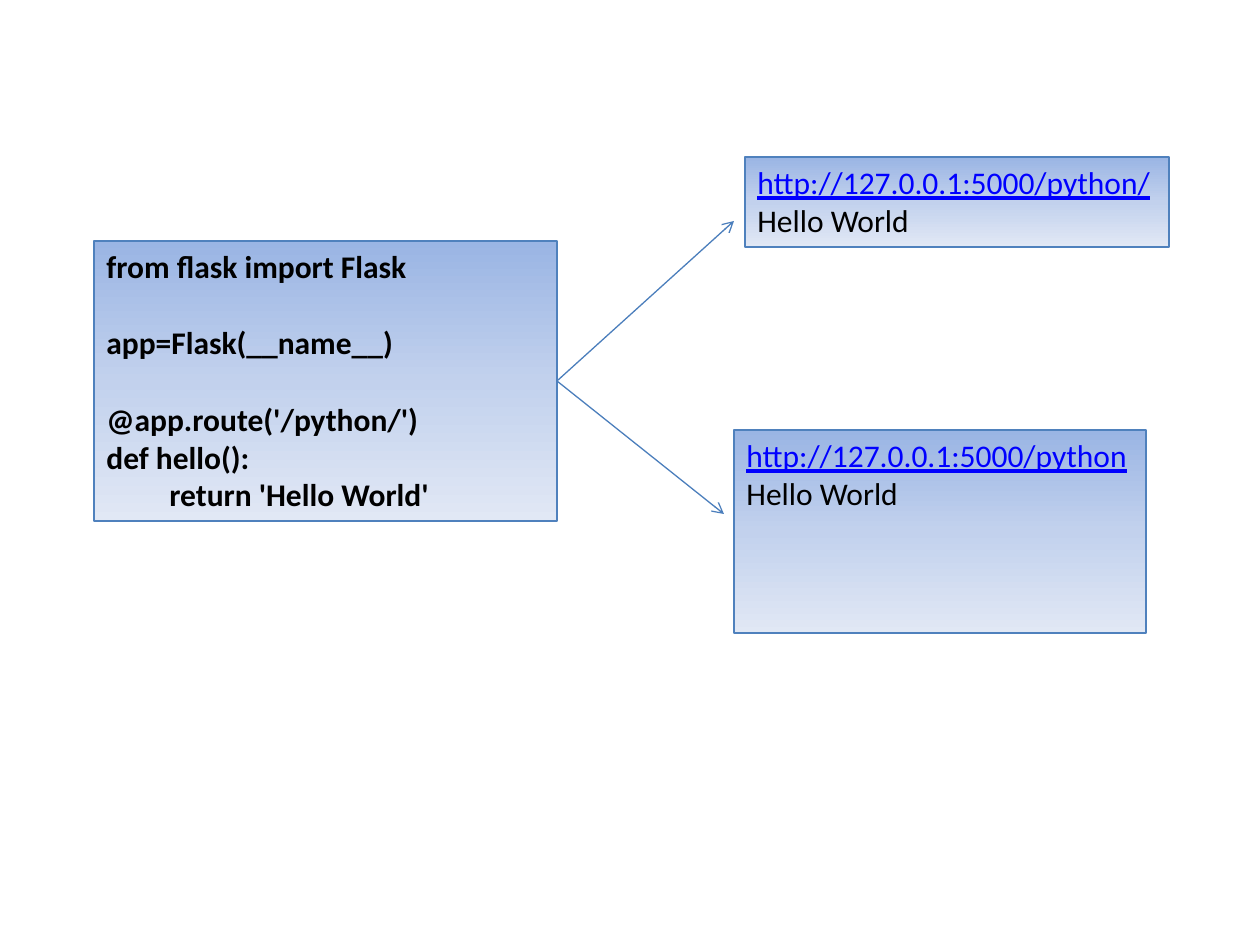
import copy

import pptx
import pptx.dml.color
import pptx.enum.dml
import pptx.enum.shapes
import pptx.enum.text
import pptx.oxml.ns
import pptx.oxml.xmlchemy
import pptx.util

RGBColor = pptx.dml.color.RGBColor
BLACK = RGBColor(0x00, 0x00, 0x00)
LINK_BLUE = RGBColor(0x00, 0x00, 0xFF)
BORDER = RGBColor(0x4F, 0x81, 0xBD)
ARROW = RGBColor(0x4B, 0x7E, 0xBC)
GRADIENT = (
    (0, RGBColor(0x9A, 0xB5, 0xE4)),
    (0.5, RGBColor(0xC2, 0xD1, 0xED)),
    (1, RGBColor(0xE1, 0xE8, 0xF5)),
)
PX_PER_INCH = 126
LINE_PT = 22


def px(length):
    return pptx.util.Emu(round(length * 914400 / PX_PER_INCH))


def fill_gradient(shape):
    shape.fill.gradient()
    shape.fill.gradient_angle = 270
    stop_list = shape.fill._fill._gradFill.gsLst
    stop_list.append(copy.deepcopy(stop_list[-1]))
    for stop, (position, color) in zip(shape.fill.gradient_stops, GRADIENT):
        stop.position = position
        stop.color.rgb = color


def add_box(slide, left, top, width, height, wrap=True):
    box = slide.shapes.add_shape(
        pptx.enum.shapes.MSO_SHAPE.RECTANGLE, px(left), px(top), px(width), px(height)
    )
    box.shadow.inherit = False
    fill_gradient(box)
    box.line.color.rgb = BORDER
    box.line.width = pptx.util.Pt(0.75)
    box.text_frame.word_wrap = wrap
    box.text_frame.vertical_anchor = pptx.enum.text.MSO_ANCHOR.TOP
    return box.text_frame


def write_line(frame, text, color=BLACK, bold=False, underline=False, gap=0):
    first = frame.paragraphs[0]
    paragraph = frame.add_paragraph() if first.runs else first
    paragraph.alignment = pptx.enum.text.PP_ALIGN.LEFT
    paragraph.space_before = pptx.util.Pt(gap)
    run = paragraph.add_run()
    run.text = text
    run.font.name = "Calibri"
    run.font.size = pptx.util.Pt(18)
    run.font.bold = bold
    run.font.underline = underline
    run.font.color.rgb = color


def add_response(slide, url, *place, wrap=True):
    response = add_box(slide, *place, wrap=wrap)
    write_line(response, url, color=LINK_BLUE, underline=True)
    write_line(response, "Hello World")


def add_arrow(slide, start, end):
    arrow = slide.shapes.add_connector(
        pptx.enum.shapes.MSO_CONNECTOR.STRAIGHT, *map(px, start + end)
    )
    arrow.line.color.rgb = ARROW
    arrow.line.width = pptx.util.Pt(0.75)
    head = pptx.oxml.xmlchemy.OxmlElement("a:tailEnd")
    head.set("type", "arrow")
    arrow.line._get_or_add_ln().append(head)
    arrow._element.spPr.append(pptx.oxml.xmlchemy.OxmlElement("a:effectLst"))


def main():
    deck = pptx.Presentation()
    deck.slide_width = px(1260)
    deck.slide_height = px(945)
    slide = deck.slides.add_slide(deck.slide_layouts[6])

    code = add_box(slide, 94, 241, 463, 280)
    for text, gap in (
        ("from flask import Flask", 0),
        ("app=Flask(__name__)", LINE_PT),
        ("@app.route('/python/')", LINE_PT),
        ("def hello():", 0),
        ("\treturn 'Hello World'", 0),
    ):
        write_line(code, text, bold=True, gap=gap)

    add_response(slide, "http://127.0.0.1:5000/python/", 745, 157, 424, 90, wrap=False)
    add_response(slide, "http://127.0.0.1:5000/python", 734, 430, 412, 203)

    code_edge = (557, 381)
    for target in ((734, 221), (724, 514)):
        add_arrow(slide, code_edge, target)

    deck.save("out.pptx")


if __name__ == "__main__":
    main()
